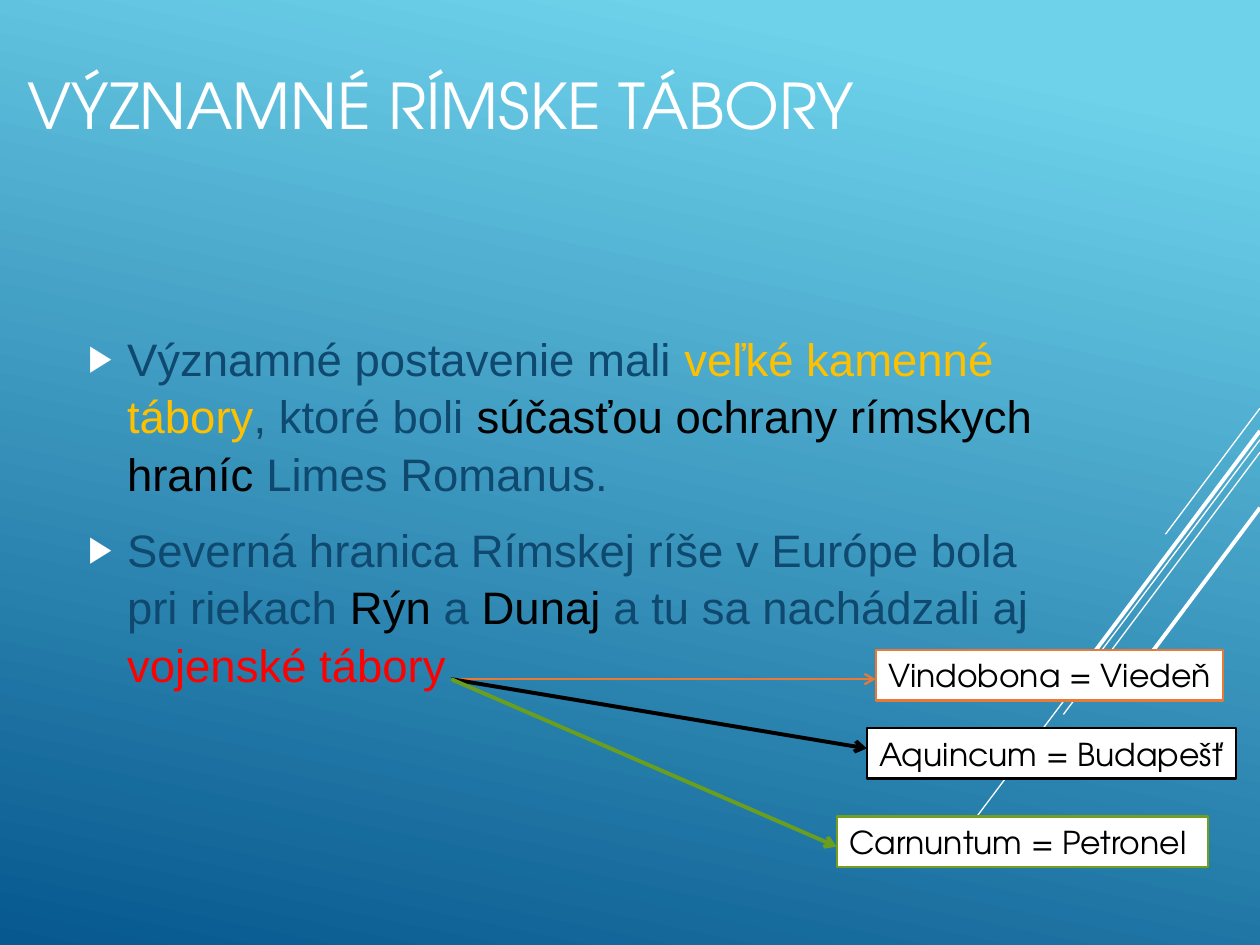
from lxml.etree import SubElement
from pptx import Presentation
from pptx.dml.color import RGBColor
from pptx.enum.shapes import MSO_CONNECTOR as Connector, MSO_SHAPE as Preset
from pptx.enum.text import MSO_ANCHOR as Anchor, PP_ALIGN as Align
from pptx.oxml.ns import qn
from pptx.util import Inches, Pt

THEME = {
    "sky": "6ED2EB", "deep": "06588E", "white": "FFFFFF", "black": "000000",
    "navy": "0F496F", "gold": "FFC000", "red": "FF0000",
    "orange": "E87937", "green": "6A9E1F", "olive": "759E1F",
    "heading_font": "TeX Gyre Adventor", "body_font": "Arial",
    "title_size": 36, "body_size": 26, "label_size": 18,
}

TITLE = "VÝZNAMNÉ RÍMSKE TÁBORY"
BULLETS = [
    [("Významné postavenie mali ", "navy"), ("veľké kamenné tábory", "gold"),
     (", ktoré boli ", "navy"), ("súčasťou ochrany rímskych hraníc ", "black"),
     ("Limes Romanus.", "navy")],
    [("Severná hranica Rímskej ríše v Európe bola pri riekach ", "navy"),
     ("Rýn", "black"), (" a ", "navy"), ("Dunaj ", "black"),
     ("a tu sa nachádzali aj ", "navy"), ("vojenské tábory", "red")],
]
STRIPES = [
    ((10, 3.24), (9.25, 4.24), 0.75),
    ((10, 3.49), (7.55, 6.75), 0.75),
    ((10, 3.59), (8.44, 5.67), 0.75),
    ((10, 3.42), (8.57, 5.33), 2.25),
    ((10, 4.03), (8.96, 5.42), 2.25),
]
ARROW_START = (3.58, 5.39)
LABEL_HEIGHT = 0.4
CAMPS = [
    ("Vindobona = Viedeň", (6.95, 5.16, 2.76), 5.39, "orange", "orange", 1.25),
    ("Aquincum = Budapešť", (6.88, 5.78, 2.93), 5.94, "black", "black", 2.25),
    ("Carnuntum = Petronel", (6.64, 6.48, 2.95), 6.72, "green", "olive", 2.25),
]


def color(name):
    return RGBColor.from_string(THEME[name])


def style_font(font, face, size, color_name=None):
    font.name = THEME[face]
    font.size = Pt(THEME[size])
    if color_name:
        font.color.rgb = color(color_name)


def add_line(slide, start, end, color_name, width, arrow=False):
    line = slide.shapes.add_connector(
        Connector.STRAIGHT, *(Inches(value) for value in (*start, *end)))
    line.line.color.rgb = color(color_name)
    line.line.width = Pt(width)
    properties = line._element.spPr
    if arrow:
        SubElement(properties.find(qn("a:ln")), qn("a:tailEnd"), type="arrow")
    SubElement(properties, qn("a:effectLst"))


def paint_background(slide):
    fill = slide.background.fill
    fill.gradient()
    fill.gradient_angle = 360 - 102
    for stop, name, position in zip(fill.gradient_stops, ("sky", "deep"), (0.1, 1)):
        stop.color.rgb = color(name)
        stop.position = position


def add_title(slide):
    title = slide.shapes.title
    title.left, title.top, title.width, title.height = map(Inches, (0, 0, 7, 1.65))
    title.text_frame.text = TITLE
    title.text_frame.vertical_anchor = Anchor.MIDDLE
    paragraph = title.text_frame.paragraphs[0]
    paragraph.alignment = Align.CENTER
    style_font(paragraph.font, "heading_font", "title_size", "white")


def add_bullet(paragraph):
    properties = paragraph._p.get_or_add_pPr()
    properties.set("marL", str(Inches(0.31)))
    properties.set("indent", str(-Inches(0.31)))
    bullet_color = SubElement(properties, qn("a:buClr"))
    SubElement(bullet_color, qn("a:srgbClr"), val=THEME["white"])
    SubElement(properties, qn("a:buSzPct"), val="80000")
    SubElement(properties, qn("a:buFont"), typeface=THEME["body_font"])
    SubElement(properties, qn("a:buChar"), char="▶")


def add_body(slide):
    body = slide.shapes.add_textbox(*map(Inches, (0.6, 2.07, 7.79, 3.95)))
    frame = body.text_frame
    frame.word_wrap = True
    frame.vertical_anchor = Anchor.MIDDLE
    for index, runs in enumerate(BULLETS):
        paragraph = frame.add_paragraph() if index else frame.paragraphs[0]
        add_bullet(paragraph)
        paragraph.line_spacing = 1.05
        paragraph.space_before = Pt(5 if index else 0)
        paragraph.space_after = Pt(6)
        style_font(paragraph.font, "body_font", "body_size")
        for text, color_name in runs:
            run = paragraph.add_run()
            run.text = text
            run.font.color.rgb = color(color_name)


def add_label(slide, text, place, border):
    label = slide.shapes.add_shape(
        Preset.RECTANGLE, *map(Inches, (*place, LABEL_HEIGHT)))
    label.shadow.inherit = False
    label.fill.solid()
    label.fill.fore_color.rgb = color("white")
    label.line.color.rgb = color(border)
    label.line.width = Pt(1.25)
    frame = label.text_frame
    frame.word_wrap = True
    frame.margin_right = 0
    frame.vertical_anchor = Anchor.MIDDLE
    frame.text = text
    paragraph = frame.paragraphs[0]
    paragraph.alignment = Align.LEFT
    style_font(paragraph.font, "heading_font", "label_size", "black")


def main():
    presentation = Presentation()
    presentation.slide_width = Inches(10)
    presentation.slide_height = Inches(7.5)
    slide = presentation.slides.add_slide(presentation.slide_layouts[5])
    paint_background(slide)
    for start, end, width in STRIPES:
        add_line(slide, start, end, "white", width)
    add_title(slide)
    add_body(slide)
    for text, place, tip, arrow_color, border, width in CAMPS:
        add_line(slide, ARROW_START, (place[0], tip), arrow_color, width, arrow=True)
        add_label(slide, text, place, border)
    presentation.save("out.pptx")


if __name__ == "__main__":
    main()
